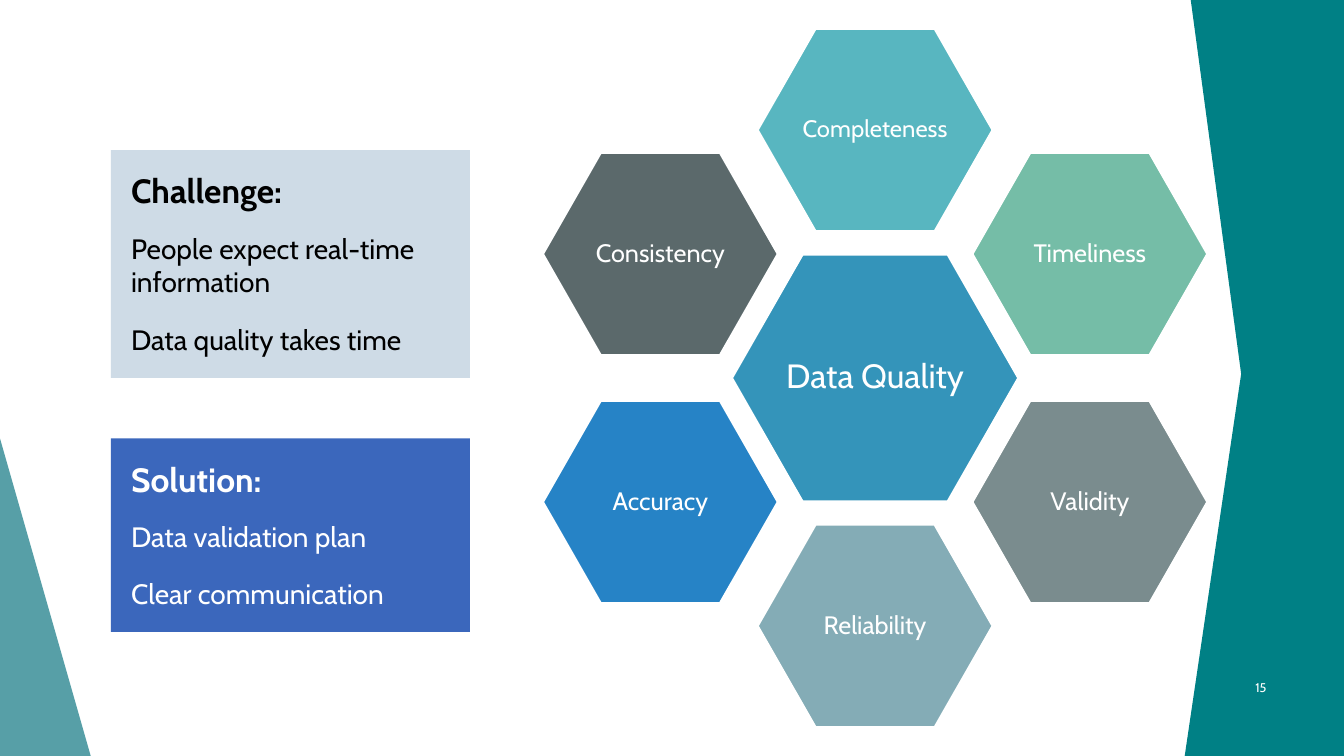
from lxml.etree import SubElement
from pptx import Presentation
from pptx.dml.color import RGBColor
from pptx.enum.shapes import MSO_SHAPE
from pptx.enum.text import MSO_ANCHOR, PP_ALIGN
from pptx.oxml.ns import qn
from pptx.util import Pt

EMU_PER_PX = 9144
FONT = "Cabin"
WHITE = "FFFFFF"
BLACK = "000000"
HUB_CENTRE = (868, 375)
RING_STEP = (213, 123)
HUB_SIZE = (284, 245)
RING_SIZE = (233, 201)
DIMENSIONS = [
    ("Completeness", 0, -2, "58B6C0", 17),
    ("Timeliness", 1, -1, "75BDA7", 18),
    ("Validity", 1, 1, "7A8C8E", 18),
    ("Reliability", 0, 2, "84ACB6", 18),
    ("Accuracy", -1, 1, "2683C6", 18),
    ("Consistency", -1, -1, "5B696B", 18),
]


def px(length):
    return int(length * EMU_PER_PX)


def rgb(colour):
    return RGBColor.from_string(colour)


def set_format(target, values):
    for name, value in values.items():
        setattr(target, name, value)


def paint(shape, colour):
    shape.shadow.inherit = False
    shape.fill.solid()
    shape.fill.fore_color.rgb = rgb(colour)
    shape.line.fill.background()


def add_preset(slide, kind, bounds, colour):
    shape = slide.shapes.add_shape(kind, *map(px, bounds))
    paint(shape, colour)
    return shape


def set_frame(frame, inset, anchor, wrap):
    set_format(frame, {
        "margin_left": px(inset), "margin_right": px(inset),
        "margin_top": px(inset), "margin_bottom": px(inset),
        "vertical_anchor": anchor, "word_wrap": wrap,
    })


def write(paragraph, wording, size, colour, align, bold=False, **spacing):
    paragraph.text = wording
    set_format(paragraph, {"alignment": align, **spacing})
    set_format(paragraph.font, {"name": FONT, "size": Pt(size), "bold": bold})
    paragraph.font.color.rgb = rgb(colour)


def add_edges(slide):
    left_edge = add_preset(slide, MSO_SHAPE.RIGHT_TRIANGLE,
                           (-2, 428, 92, 322), "3A8F98")
    tint = next(left_edge.element.spPr.iter(qn("a:srgbClr")))
    SubElement(tint, qn("a:alpha"), val="85000")

    outline = slide.shapes.build_freeform(1333, 0, scale=EMU_PER_PX)
    outline.add_line_segments([(1333, 750), (1175, 750), (1231, 371), (1181, 0)])
    paint(outline.convert_to_shape(), "008085")


def add_panel(slide, top, height, fill, ink, heading, points):
    panel = add_preset(slide, MSO_SHAPE.RECTANGLE, (110, top, 356, height), fill)
    frame = panel.text_frame
    set_frame(frame, 20, MSO_ANCHOR.TOP, True)
    write(frame.paragraphs[0], heading, 24, ink, PP_ALIGN.LEFT, bold=True)
    for point, gap in zip(points, (14.6, 17)):
        write(frame.add_paragraph(), point, 20, ink, PP_ALIGN.LEFT,
              space_before=Pt(gap))


def add_hexagon(slide, label, column, row, fill, text_size, size):
    width, height = size
    left = HUB_CENTRE[0] + column * RING_STEP[0] - width / 2
    top = HUB_CENTRE[1] + row * RING_STEP[1] - height / 2
    hexagon = add_preset(slide, MSO_SHAPE.HEXAGON, (left, top, width, height), fill)
    hexagon.adjustments[0] = 0.286
    hexagon.line.color.rgb = rgb(WHITE)
    hexagon.line.width = Pt(1.5)
    set_frame(hexagon.text_frame, 3, MSO_ANCHOR.MIDDLE, False)
    write(hexagon.text_frame.paragraphs[0], label, text_size, WHITE,
          PP_ALIGN.CENTER, line_spacing=0.9)


def add_page_number(slide, number):
    frame = slide.shapes.add_textbox(*map(px, (1191, 662, 75, 40))).text_frame
    set_frame(frame, 10, MSO_ANCHOR.MIDDLE, True)
    write(frame.paragraphs[0], number, 9, WHITE, PP_ALIGN.RIGHT)


def main():
    deck = Presentation()
    set_format(deck, {"slide_width": px(1333), "slide_height": px(750)})
    slide = deck.slides.add_slide(deck.slide_layouts[6])
    add_edges(slide)
    add_panel(slide, 149, 226, "CEDBE6", BLACK, "Challenge:",
              ["People expect real-time information", "Data quality takes time"])
    add_panel(slide, 435, 192, "3B67BC", WHITE, "Solution:",
              ["Data validation plan", "Clear communication"])
    add_hexagon(slide, "Data Quality", 0, 0, "3494BA", 24, HUB_SIZE)
    for dimension in DIMENSIONS:
        add_hexagon(slide, *dimension, RING_SIZE)
    add_page_number(slide, "15")
    deck.save("out.pptx")


if __name__ == "__main__":
    main()
